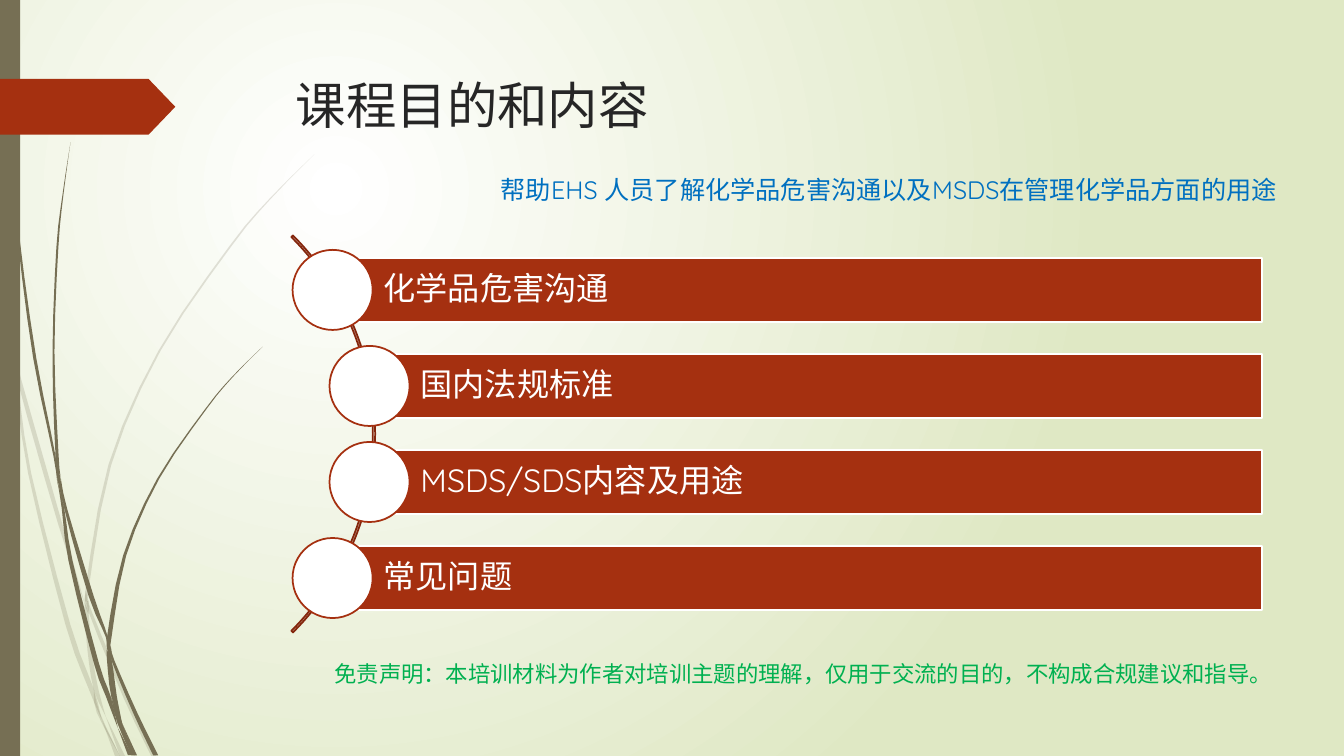
from dataclasses import dataclass

from lxml.etree import SubElement
from pptx import Presentation
from pptx.dml.color import RGBColor
from pptx.enum.shapes import MSO_SHAPE
from pptx.enum.text import MSO_ANCHOR, MSO_AUTO_SIZE, PP_ALIGN
from pptx.oxml.ns import qn
from pptx.util import Pt


@dataclass(frozen=True)
class Theme:
    glow: str = "FFFFFF"
    meadow: str = "DFE8C4"
    stem: str = "766F54"
    accent: str = "A53010"
    arc: str = "84260D"
    white: str = "FFFFFF"
    ink: str = "262626"
    goal: str = "0070C0"
    disclaimer: str = "00B050"
    font: str = "Quicksand"
    disclaimer_font: str = "Arial"
    title_size: int = 36
    topic_size: int = 23
    goal_size: int = 18
    disclaimer_size: int = 16
    outline: float = 1.25


@dataclass(frozen=True)
class Box:
    left: float
    top: float
    width: float
    height: float

    def points(self):
        return Pt(self.left), Pt(self.top), Pt(self.width), Pt(self.height)


THEME = Theme()
SLIDE = Box(0, 0, 960, 540)
TOPICS = ["化学品危害沟通", "国内法规标准", "MSDS/SDS内容及用途", "常见问题"]
GOAL = "帮助EHS 人员了解化学品危害沟通以及MSDS在管理化学品方面的用途"
DISCLAIMER = "免责声明：本培训材料为作者对培训主题的理解，仅用于交流的目的，不构成合规建议和指导。"

PALE_BLADES = [
    [(0, 203, 0), (1.5, 215, 3), (5, 232, 3), (8, 252, 0)],
    [(10, 248.4, 0), (13.7, 271, 2.9), (43.2, 375, 3), (60.5, 431.3, 0)],
    [(63.4, 429, 0), (64.8, 438, 2.4), (90, 499, 3), (109.8, 540, 3.6)],
    [(75.6, 512, 0), (87.5, 540, 3.6)],
    [(8, 252, 0), (11.5, 271, 1.6), (21.2, 338, 2.2), (48.5, 446, 3.5),
     (65.2, 492, 3.6), (72.7, 514, 0)],
    [(60.5, 431, 0), (61.9, 439, 2.9), (64, 465, 2.9), (68.5, 492, 3.4), (75.6, 512, 0)],
    [(224.6, 110.2, 0), (193, 142, 1), (164.5, 176, 1.5), (114, 250.5, 1.5),
     (78.5, 332, 2), (62.3, 420.5, 2.2), (63.4, 429, 0)],
    [(72.7, 514, 0), (83.9, 540, 3.6)],
    [(61.2, 422, 0), (61.9, 431, 2.9), (63.4, 439, 0)],
    [(67, 492, 0), (70.2, 509, 2.1), (85.7, 540, 0)],
]
DARK_BLADES = [
    [(2.5, 0, 0.7), (5.4, 79, 0.7), (13, 167.5, 1.4), (24.8, 255.6, 2.2),
     (39, 326, 1.5), (41, 346.3, 0)],
    [(43.2, 340, 0), (47, 363.6, 2), (65.2, 426, 3.6), (76.3, 455, 1.4), (76.3, 464.4, 0)],
    [(79.2, 461.5, 0), (80.8, 472, 2), (96.5, 509, 3), (111.2, 539.5, 3.6)],
    [(41, 343.4, 0), (45.1, 363.6, 1.8), (50.4, 400.5, 2.9), (68.8, 473.5, 3.6),
     (77.4, 497.5, 3.4), (84.2, 520, 0)],
    [(50.4, 101.5, 0), (45, 139, 0.7), (41, 176.5, 1.4), (38.2, 251.3, 1.4),
     (40.7, 324, 2.2), (43.2, 340, 0)],
    [(87.8, 517.7, 0), (96.8, 539.5, 2.2)],
    [(39.6, 323, 0), (42.1, 342, 2.2), (46, 363.6, 0)],
    [(187.6, 247.7, 0), (166.3, 269, 0.7), (147.2, 292, 1), (113, 342, 1.5),
     (89, 397, 2.2), (78.1, 455, 3.2), (79.2, 461.5, 0)],
    [(84.2, 520, 0), (92.9, 539.5, 2.9)],
    [(76.3, 464.4, 0), (78.2, 472, 3.4), (81.5, 497.5, 4), (87.5, 517.7, 0)],
    [(76.3, 454.3, 0), (77.8, 463, 2.9), (79.8, 472.3, 0)],
    [(79.2, 497.5, 0), (85.5, 516.3, 3.4), (95, 539.5, 2.2)],
]


def paint(shape, fill=None, line=None):
    shape.shadow.inherit = False
    if fill:
        shape.fill.solid()
        shape.fill.fore_color.rgb = RGBColor.from_string(fill)
    else:
        shape.fill.background()
    if line:
        shape.line.color.rgb = RGBColor.from_string(line)
        shape.line.width = Pt(THEME.outline)
    else:
        shape.line.fill.background()


def write(shape, text, size, color, font=THEME.font):
    frame = shape.text_frame
    frame.text = text
    frame.word_wrap = True
    para = frame.paragraphs[0]
    para.alignment = PP_ALIGN.LEFT
    for span in para.runs:
        span.font.name = font
        span.font.size = Pt(size)
        span.font.color.rgb = RGBColor.from_string(color)
    return para


def add_background(page):
    fill = page.background.fill
    fill.gradient()
    for stop, color in zip(fill.gradient_stops, (THEME.glow, THEME.meadow)):
        stop.color.rgb = RGBColor.from_string(color)
    gradient = next(page.element.iter(qn("a:gradFill")))
    gradient.remove(gradient.find(qn("a:lin")))
    radial = SubElement(gradient, qn("a:path"), {"path": "circle"})
    SubElement(radial, qn("a:fillToRect"),
               {"l": "50000", "t": "50000", "r": "100000", "b": "100000"})


def smooth(knots, steps=3):
    padded = [knots[0], *knots, knots[-1]]
    curve = []
    for before, start, end, after in zip(padded, padded[1:], padded[2:], padded[3:]):
        for step in range(steps):
            t = step / steps
            curve.append(tuple(
                b + (c - a) * t / 2 + (2 * a - 5 * b + 4 * c - d) * t**2 / 2
                + (3 * b - a - 3 * c + d) * t**3 / 2
                for a, b, c, d in zip(before, start, end, after)))
    return curve + [knots[-1]]


def add_blade(page, box, knots, alpha=None):
    curve = smooth(knots)
    edge = [(x - w / 2, y) for x, y, w in curve]
    edge += [(x + w / 2, y) for x, y, w in reversed(curve)]
    outline = [(Pt(box.left + x), Pt(box.top + y)) for x, y in edge]
    builder = page.shapes.build_freeform(*outline[0], scale=1.0)
    builder.add_line_segments(outline[1:], close=True)
    blade = builder.convert_to_shape()
    paint(blade, THEME.stem)
    if alpha:
        color = next(blade.element.spPr.iter(qn("a:srgbClr")))
        SubElement(color, qn("a:alpha"), {"val": str(alpha * 1000)})


def add_side_decoration(page, box):
    for blades, alpha in ((PALE_BLADES, 20), (DARK_BLADES, None)):
        for knots in blades:
            add_blade(page, box, knots, alpha)
    stripe = Box(box.left, box.top, 14.4, box.height)
    paint(page.shapes.add_shape(MSO_SHAPE.RECTANGLE, *stripe.points()), THEME.stem)
    flag_box = Box(box.left, box.top + 56.4, 125.2, 39.8)
    flag = page.shapes.add_shape(MSO_SHAPE.PENTAGON, *flag_box.points())
    flag.adjustments[0] = 0.48
    paint(flag, THEME.accent)


def add_title(page, box):
    title = page.shapes.title
    title.left, title.top, title.width, title.height = box.points()
    write(title, "课程目的和内容", THEME.title_size, THEME.ink)
    title.text_frame.vertical_anchor = MSO_ANCHOR.TOP
    title.text_frame.auto_size = MSO_AUTO_SIZE.NONE


def add_note(page, box, text, size, color, font):
    note = page.shapes.add_textbox(*box.points())
    write(note, text, size, color, font)
    note.text_frame.auto_size = MSO_AUTO_SIZE.SHAPE_TO_FIT_TEXT


def add_topics(page, box):
    diameter, bar_height, indent, ring = 57.2, 45.8, 26.4, 401
    pitch = (box.height - diameter) / (len(TOPICS) - 1)
    arc_box = Box(box.left + 59 - ring, box.top + (box.height - ring) / 2, ring, ring)
    arc = page.shapes.add_shape(MSO_SHAPE.BLOCK_ARC, *arc_box.points())
    for index, value in enumerate((189, 27, 0.004)):
        arc.adjustments[index] = value
    paint(arc, line=THEME.arc)

    for index, topic in enumerate(TOPICS):
        inner = 0 < index < len(TOPICS) - 1
        left = box.left + (indent if inner else 0)
        top = box.top + index * pitch
        bar_left = left + diameter / 2
        bar_box = Box(bar_left, top + (diameter - bar_height) / 2,
                      box.left + box.width - bar_left, bar_height)
        bar = page.shapes.add_shape(MSO_SHAPE.RECTANGLE, *bar_box.points())
        paint(bar, THEME.accent, THEME.white)
        write(bar, topic, THEME.topic_size, THEME.white).line_spacing = 0.9
        frame = bar.text_frame
        frame.vertical_anchor = MSO_ANCHOR.MIDDLE
        frame.margin_left = Pt(36.3)
        frame.margin_top = frame.margin_right = frame.margin_bottom = Pt(4.6)
        circle_box = Box(left, top, diameter, diameter)
        circle = page.shapes.add_shape(MSO_SHAPE.OVAL, *circle_box.points())
        paint(circle, THEME.white, THEME.accent)


def main():
    deck = Presentation()
    deck.slide_width, deck.slide_height = Pt(SLIDE.width), Pt(SLIDE.height)
    page = deck.slides.add_slide(deck.slide_layouts[5])
    add_background(page)
    add_side_decoration(page, SLIDE)
    add_title(page, Box(204.2, 49, 702, 100.8))
    add_topics(page, Box(209, 178.5, 692.6, 263))
    add_note(page, Box(350.6, 121, 573, 29), GOAL,
             THEME.goal_size, THEME.goal, THEME.font)
    add_note(page, Box(231.8, 468, 719, 26.6), DISCLAIMER,
             THEME.disclaimer_size, THEME.disclaimer, THEME.disclaimer_font)
    deck.save("out.pptx")


if __name__ == "__main__":
    main()
